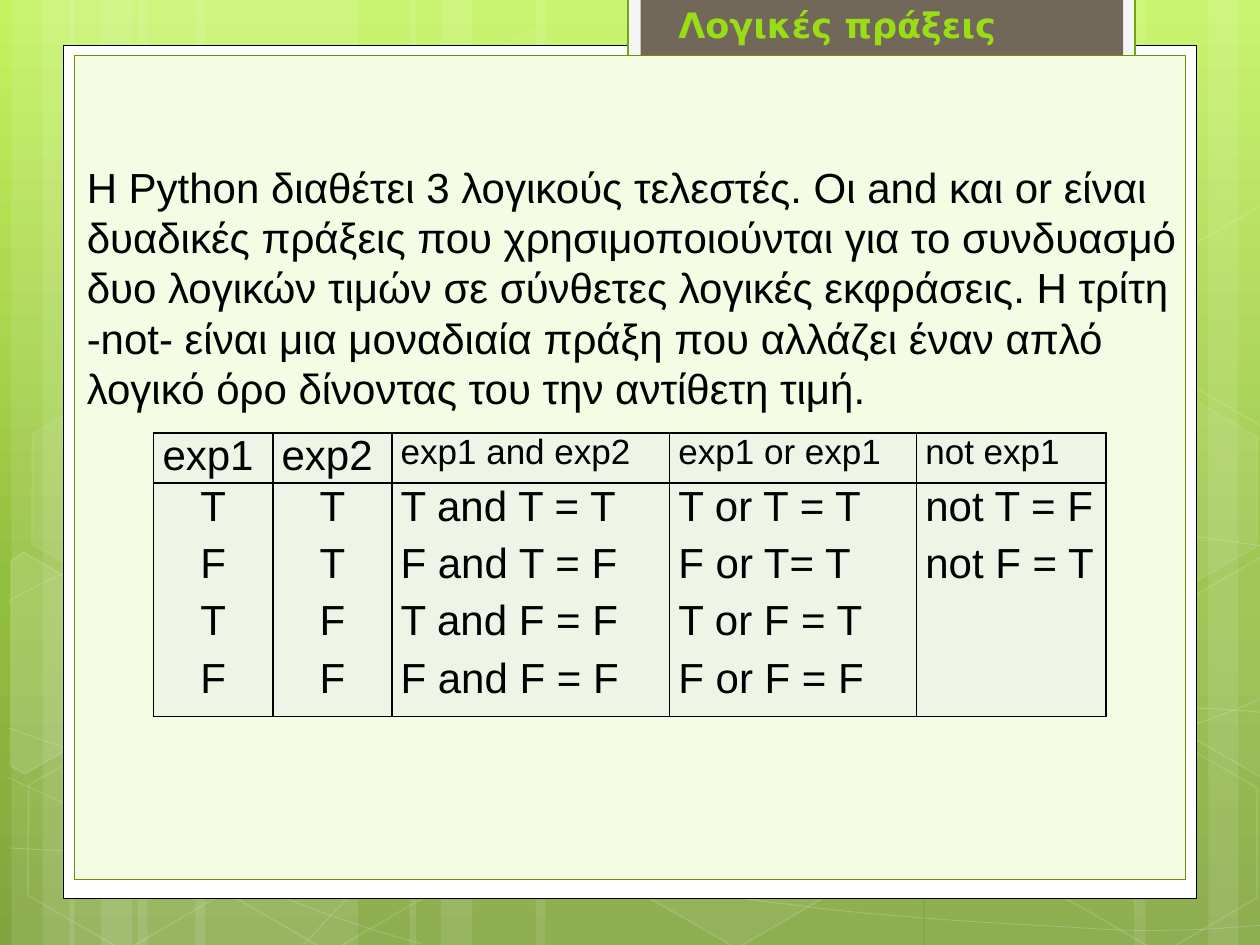
from itertools import product
from lxml.etree import SubElement
from pptx import Presentation
from pptx.dml.color import RGBColor
from pptx.enum.shapes import MSO_SHAPE
from pptx.enum.text import MSO_AUTO_SIZE, PP_ALIGN
from pptx.oxml import parse_xml
from pptx.oxml.ns import nsdecls, qn
from pptx.util import Inches, Pt

COLS, ROWS = 100, 75
UNIT = Inches(0.1)
WHITE, BLACK = "FFFFFF", "000000"

BACKDROP = [(0, "C3F35F"), (62, "93BF3F"), (100, "81A53E")]
STRIPE_GROUP = [(10.9, 17.5), (0.9, 5), (3.4, 8.3)]
STRIPES = [(x + dx, w) for dx in (0, 4.6) for x, w in STRIPE_GROUP] + [
    (73.4, 17.5), (95.9, 5), (90, 8.3), (42.5, 30.8), (32.5, 5), (35, 8.3)]
CURVES = [
    [(0.7, 67.3), (6.1, 67.6), (11.5, 67.9), (19, 67.8), (26.5, 67.7), (35.8, 67.5),
     (45.8, 66.5), (55.8, 65.5), (70, 63.6), (79.2, 61.7), (88.3, 59.8), (97.7, 56.8),
     (100.7, 55.1)],
    [(0.7, 47.7), (3.6, 46.1), (6.5, 44.6), (12.1, 43.1), (17.8, 41.6), (25.9, 39.4),
     (34.7, 38.7), (43.6, 38), (54.4, 37.9), (65.4, 38.7), (76.4, 39.5), (94.7, 42.6),
     (100.7, 43.4)],
    [(0.6, 61.7), (12.7, 67.2), (24.7, 72.7), (33.5, 74.9)],
    [(0.7, 57.8), (3.8, 58.9), (7, 60), (12.8, 61.6), (18.6, 63.1), (27.3, 65.6),
     (35.7, 67.3), (44, 69), (54.5, 70.8), (62.8, 71.8), (71.1, 72.9), (80, 73.3),
     (85.3, 73.6), (90.6, 74), (91.9, 73.8), (94.5, 73.8), (97.1, 73.7), (98.9, 73.5),
     (100.7, 73.4)],
    [(24.2, 74.9), (26, 72.9), (27.8, 70.9), (30.2, 69.1), (32.6, 67.2), (36, 65.3),
     (38.8, 63.9), (41.6, 62.5), (43.3, 61.9), (46.9, 60.9), (50.6, 59.9), (57.3, 58.5),
     (60.8, 57.8), (64.4, 57.1), (64.9, 57.1), (68, 56.9), (71.1, 56.6), (76, 56.3),
     (79.4, 56.2), (82.9, 56.1), (88.6, 56.2), (88.6, 56.2), (90.8, 56.2), (93, 56.2),
     (95.3, 56.2), (97.1, 56.3), (98.8, 56.4), (99.7, 56.5), (100.6, 56.6),
     (100.3, 56.5), (100.6, 56.6)]]
HEXAGONS = [(33.4, 3.6, 4, 8), (49.7, 58.9, 6, 12), (1.1, 59.1, 0, 12),
            (1.4, 31.2, 7, 8), (17.4, 59.2, 0, 12), (75.3, 45.3, 10, 12),
            (83.4, 59.3, 0, 12), (83.4, 31.4, 7, 8)]
CUT_RIGHT = [(0, 7.5), (4.3, 0), (5.2, 0), (13.6, 14.5), (13.1, 15.2), (4.3, 15.2)]
CUT_LEFT = [(0, 1.1), (0.5, 0), (9.4, 0), (13.8, 7.6), (9.4, 15.2), (8.1, 15.2)]
CUT_HEXAGONS = [(-3.3, 46, CUT_LEFT, 10), (91.7, 44.4, CUT_RIGHT, 4),
                (91.7, 16.5, CUT_RIGHT, 0)]

TITLE = "Λογικές πράξεις"
BODY = ("H Python διαθέτει 3 λογικούς τελεστές. Οι and και or είναι δυαδικές πράξεις "
        "που χρησιμοποιούνται για το συνδυασμό δυο λογικών τιμών σε σύνθετες λογικές "
        "εκφράσεις. Η τρίτη -not- είναι μια μοναδιαία πράξη που αλλάζει έναν απλό "
        "λογικό όρο δίνοντας του την αντίθετη τιμή.")
COLUMNS = [
    ("exp1", 9.45, 24, PP_ALIGN.CENTER, ["T", "F", "T", "F"]),
    ("exp2", 9.45, 24, PP_ALIGN.CENTER, ["T", "T", "F", "F"]),
    ("exp1 and exp2", 22.05, 20, PP_ALIGN.JUSTIFY,
     ["T and T = T", "F and T = F", "T and F = F", "F and F = F"]),
    ("exp1 or exp1", 19.6, 20, PP_ALIGN.JUSTIFY,
     ["T or T = T", "F or T= T", "T or F = T", "F or F = F"]),
    ("not exp1", 15.05, 20, PP_ALIGN.JUSTIFY, ["not T = F", "not F = T"])]


def rgb(color):
    """Turn a hex string into a colour."""
    return RGBColor.from_string(color)


def emu(*lengths):
    """Turn grid lengths into EMU."""
    return [round(n * UNIT) for n in lengths]


def assign(obj, **values):
    """Set each named attribute of an object."""
    for name, value in values.items():
        setattr(obj, name, value)


def paint(fill, color, alpha=100):
    """Fill with a colour at an opacity in percent, or with nothing at zero."""
    if not color or not alpha:
        fill.background()
        return
    fill.solid()
    fill.fore_color.rgb = rgb(color)
    if alpha < 100:
        clr = fill._xPr.find(".//" + qn("a:srgbClr"))
        SubElement(clr, qn("a:alpha")).set("val", str(alpha * 1000))


def finish(sp, fill=None, alpha=100, line=None, width=1, line_alpha=100):
    """Give a shape its fill and outline without a shadow."""
    sp.shadow.inherit = False
    paint(sp.fill, fill, alpha)
    paint(sp.line.fill, line, line_alpha)
    if line:
        sp.line.width = Pt(width)


def add_preset(s, kind, box, **look):
    """Add a preset shape to a grid box."""
    sp = s.shapes.add_shape(kind, *emu(*box))
    finish(sp, **look)
    return sp


def add_outline(s, origin, points, close, **look):
    """Add a freeform through grid points counted from an origin."""
    start, *rest = [emu(origin[0] + px, origin[1] + py) for px, py in points]
    fb = s.shapes.build_freeform(*start)
    fb.add_line_segments(rest, close=close)
    sp = fb.convert_to_shape()
    finish(sp, **look)
    return sp


def bend(sp):
    """Join each three line segments into a cubic curve, or one line when level."""
    outline = sp._element.find(".//" + qn("a:path"))
    lines = outline.findall(qn("a:lnTo"))
    for first, second, last in zip(lines[::3], lines[1::3], lines[2::3]):
        pts = [ln[0] for ln in (first, second, last)]
        if len({pt.get("y") for pt in pts}) == 1:
            outline.remove(first)
            outline.remove(second)
            continue
        curve = parse_xml(f'<a:cubicBezTo {nsdecls("a")}/>')
        first.addprevious(curve)
        curve.extend(pts)
        for ln in (first, second, last):
            outline.remove(ln)


def write(p, text, align, color=BLACK, **font):
    """Write one formatted run into a paragraph."""
    r = p.add_run()
    r.text = text
    p.alignment = align
    assign(r.font, **font)
    r.font.color.rgb = rgb(color)


def add_text(s, box, text, align, wrap, **font):
    """Add a text box holding one paragraph."""
    tf = s.shapes.add_textbox(*emu(*box)).text_frame
    assign(tf, word_wrap=wrap, auto_size=MSO_AUTO_SIZE.NONE)
    write(tf.paragraphs[0], text, align, **font)


def draw_backdrop(s, box):
    """Draw the gradient, stripes, curves and hexagons."""
    x, y, _, h = box
    fill = s.background.fill
    fill.gradient()
    fill.gradient_angle = 270
    stops = s.element.find(".//" + qn("a:gsLst"))
    stops[:] = [parse_xml(f'<a:gs {nsdecls("a")} pos="{pos * 1000}">'
                          f'<a:srgbClr val="{color}"/></a:gs>') for pos, color in BACKDROP]
    for left, width in STRIPES:
        add_preset(s, MSO_SHAPE.RECTANGLE, (x + left, y, width, h), fill=WHITE, alpha=10)
    for points in CURVES:
        bend(add_outline(s, (x, y), points, False, line=WHITE, width=0.5, line_alpha=20))
    for left, top, alpha, line_alpha in HEXAGONS:
        sp = add_preset(s, MSO_SHAPE.HEXAGON, (x + left, y + top, 17.5, 15.2), fill=WHITE,
                        alpha=alpha, line=WHITE, line_alpha=line_alpha)
        sp.adjustments[0] = 0.285
        sp.rotation = 30
    for left, top, points, alpha in CUT_HEXAGONS:
        sp = add_outline(s, (x + left, y + top), points, True, fill=WHITE, alpha=alpha,
                         line=WHITE, line_alpha=12)
        sp.rotation = 30


def draw_panel(s, box):
    """Draw the white card, the title tab and the tinted panel."""
    x, y, w, h = box
    for part, look in [
            (box, dict(fill=WHITE, line=BLACK, width=0.5)),
            ((x + 44.85, y - 3.8, 40.25, 7.7), dict(fill="F5F5F5", line="74A510", width=1.25)),
            ((x + 45.85, y - 3.8, 38.3, 6.8), dict(fill="71685A")),
            ((x + 0.9, y + 0.8, w - 1.8, h - 2.3),
             dict(fill="F4FCE4", line="6D9200", width=0.75))]:
        add_preset(s, MSO_SHAPE.RECTANGLE, part, **look)


def draw_truth_table(s, box):
    """Draw the table of logical results."""
    table = s.shapes.add_table(2, len(COLUMNS), *emu(*box)).table
    assign(table, first_row=False, horz_banding=False)
    for row, height in zip(table.rows, emu(4, box[3] - 4)):
        row.height = height
    for col, column in zip(table.columns, COLUMNS):
        col.width = emu(column[1])[0]
    for i, (j, column) in product(range(2), enumerate(COLUMNS)):
        head, _, size, align, results = column
        lines, size, align = [([head], size, PP_ALIGN.JUSTIFY), (results, 24, align)][i]
        cell = table.cell(i, j)
        assign(cell, margin_left=Inches(0.07), margin_right=Inches(0.07),
               margin_top=0, margin_bottom=0)
        paint(cell.fill, "EEF5E7")
        for n, side in enumerate("LRTB"):
            cell._tc.tcPr.insert(n, parse_xml(
                f'<a:ln{side} {nsdecls("a")} w="12700"><a:solidFill>'
                f'<a:srgbClr val="{BLACK}"/></a:solidFill></a:ln{side}>'))
        tf = cell.text_frame
        for n, text in enumerate(lines):
            p = tf.add_paragraph() if n else tf.paragraphs[0]
            p.space_after = Pt(6)
            write(p, text, align, name="Arial", size=Pt(size))


def main():
    """Build the slide on logical operators."""
    prs = Presentation()
    assign(prs, slide_width=COLS * UNIT, slide_height=ROWS * UNIT)
    s = prs.slides.add_slide(prs.slide_layouts[6])
    draw_backdrop(s, (0, 0, COLS, ROWS))
    draw_panel(s, (5, 3.6, 90, 67.7))
    add_text(s, (5.9, 12.3, 89.8, 21.2), BODY, PP_ALIGN.LEFT, True, name="Arial", size=Pt(24))
    draw_truth_table(s, (12.2, 34.35, 75.6, 22.5))
    add_text(s, (52.6, -0.2, 27.7, 4.4), TITLE, PP_ALIGN.CENTER, False,
             name="DejaVu Sans", size=Pt(20), bold=True, color="9ADD15")
    prs.save("out.pptx")


if __name__ == "__main__":
    main()
